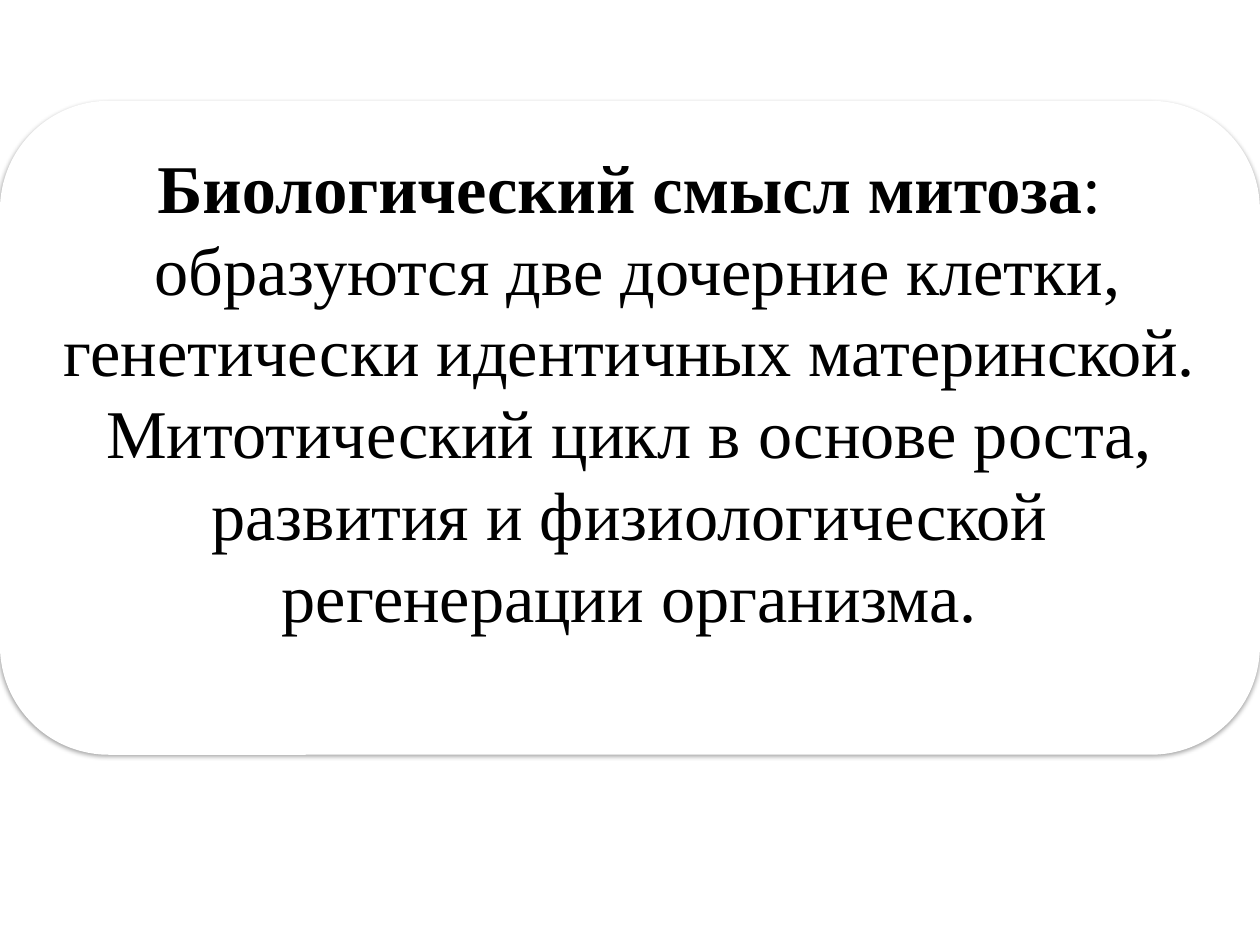
from pptx import Presentation
from pptx.dml.color import RGBColor
from pptx.enum.shapes import MSO_SHAPE as Shape
from pptx.enum.text import MSO_ANCHOR as Anchor, PP_ALIGN as Align
from pptx.oxml import parse_xml
from pptx.oxml.ns import nsdecls
from pptx.util import Inches, Pt

FONT, SIZE, PITCH = "Times New Roman", 39, 1.0
INSET, TOP = 0.16, 0.1
CARD = (0, 0.8, 10, 5.19)
BODY = (0.25, 1.05, 9.49, 4.68)
LINES = [
    [("Биологический смысл митоза", True), (":", False)],
    [(" образуются две дочерние клетки, генетически идентичных материнской. "
      "Митотический цикл в основе роста, развития и физиологической "
      "регенерации организма.", False)],
]


def color(code):
    return RGBColor.from_string(code)


def place(box):
    return [Inches(v) for v in box]


def add_card(slide):
    card = slide.shapes.add_shape(Shape.ROUNDED_RECTANGLE, *place(CARD))
    card.fill.solid()
    card.fill.fore_color.rgb = color("FFFFFF")
    card.line.fill.background()
    card._element.spPr.append(parse_xml(
        f'<a:effectLst {nsdecls("a")}>'
        f'<a:outerShdw blurRad="{Pt(3.1)}" dist="{Pt(1.6)}" dir="5400000" rotWithShape="0">'
        '<a:srgbClr val="000000"><a:alpha val="38000"/></a:srgbClr>'
        '</a:outerShdw></a:effectLst>'))


def add_body(slide):
    frame = slide.shapes.add_textbox(*place(BODY)).text_frame
    frame.word_wrap = True
    frame.vertical_anchor = Anchor.TOP
    frame.margin_left = frame.margin_right = frame.margin_bottom = Inches(INSET)
    frame.margin_top = Inches(TOP)
    for i, runs in enumerate(LINES):
        para = frame.add_paragraph() if i else frame.paragraphs[0]
        para.alignment = Align.CENTER
        para.line_spacing = PITCH
        for text, bold in runs:
            run = para.add_run()
            run.text = text
            font = run.font
            font.name, font.size, font.bold = FONT, Pt(SIZE), bold
            font.color.rgb = color("000000")


def main():
    deck = Presentation()
    deck.slide_width, deck.slide_height = Inches(10), Inches(7.5)
    slide = deck.slides.add_slide(deck.slide_layouts[6])
    add_card(slide)
    add_body(slide)
    deck.save("out.pptx")


if __name__ == "__main__":
    main()
